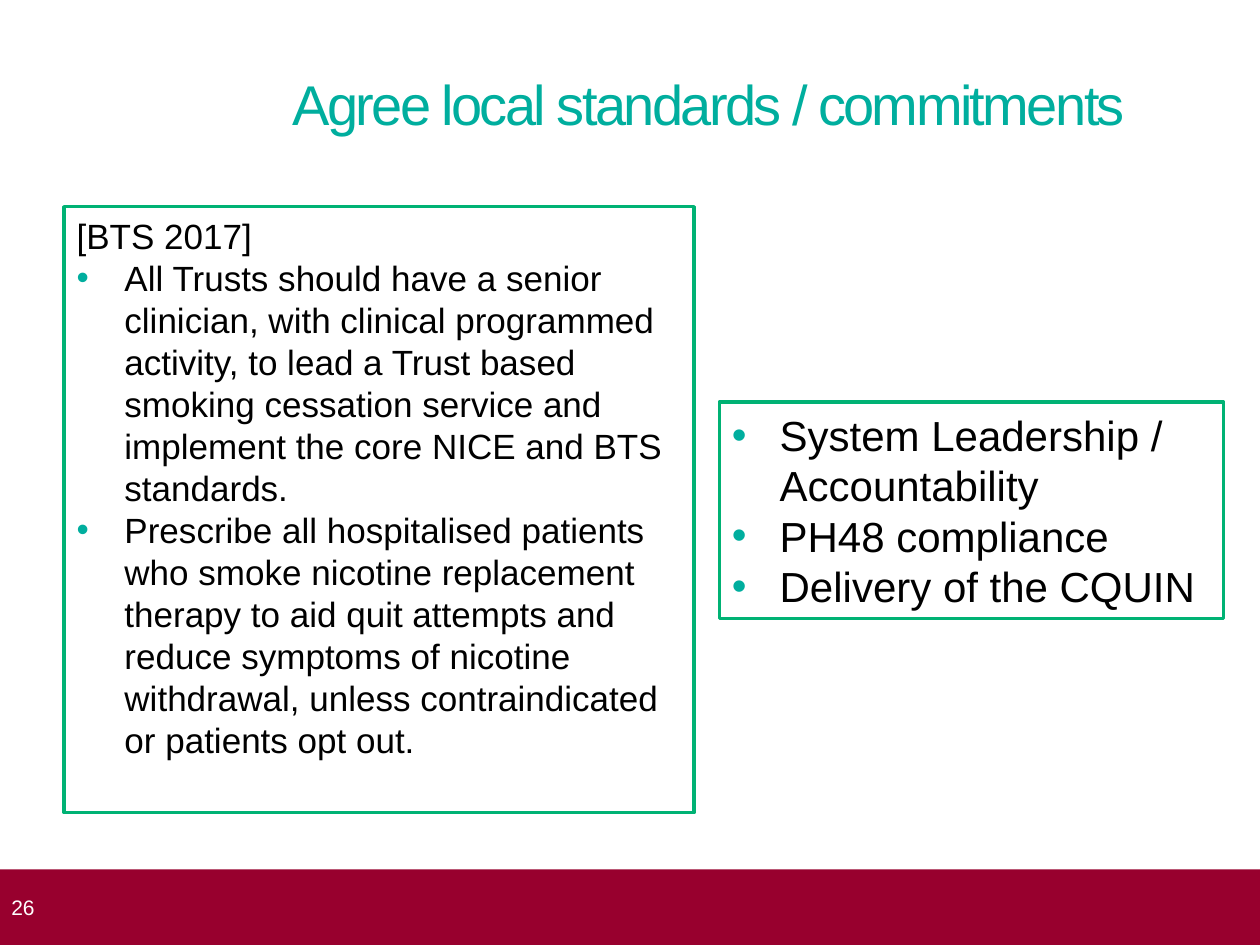
from lxml import etree
from pptx import Presentation
from pptx.dml.color import RGBColor
from pptx.enum.shapes import MSO_SHAPE
from pptx.enum.text import MSO_ANCHOR, PP_ALIGN
from pptx.oxml.ns import qn
from pptx.util import Inches, Pt

RECTANGLE = MSO_SHAPE.RECTANGLE
TOP, MIDDLE = MSO_ANCHOR.TOP, MSO_ANCHOR.MIDDLE
LEFT = PP_ALIGN.LEFT
FONT = "Arial"
TEAL, GREEN, MAROON = "00AE9E", "00B274", "98002E"
WHITE, BLACK = "FFFFFF", "000000"
LINE_HEIGHT = 1.2

STANDARDS = [
    "All Trusts should have a senior clinician, with clinical programmed activity, "
    "to lead a Trust based smoking cessation service and implement the core NICE "
    "and BTS standards.",
    "Prescribe all hospitalised patients who smoke nicotine replacement therapy to "
    "aid quit attempts and reduce symptoms of nicotine withdrawal, unless "
    "contraindicated or patients opt out.",
]
COMMITMENTS = [
    "System Leadership / Accountability",
    "PH48 compliance",
    "Delivery of the CQUIN",
]


def color(value):
    """Turn a hex string into a colour."""
    return RGBColor.from_string(value)


def set_frame(text_frame, anchor, left, top, right, bottom):
    """Set wrapping, anchor and insets of a text frame."""
    text_frame.word_wrap = True
    text_frame.vertical_anchor = anchor
    text_frame.margin_left = Inches(left)
    text_frame.margin_top = Inches(top)
    text_frame.margin_right = Inches(right)
    text_frame.margin_bottom = Inches(bottom)


def write(paragraph, text, size, text_color):
    """Fill a paragraph with one formatted run and return the run."""
    paragraph.text = text
    paragraph.alignment = LEFT
    paragraph.line_spacing = Pt(size * LINE_HEIGHT)
    run = paragraph.runs[0]
    run.font.name = FONT
    run.font.size = Pt(size)
    run.font.color.rgb = color(text_color)
    return run


def add_bullet(paragraph):
    """Give a paragraph a teal bullet with a hanging indent."""
    properties = paragraph._p.get_or_add_pPr()
    properties.set("marL", str(Inches(0.38)))
    properties.set("indent", str(Inches(-0.38)))
    bullet_color = etree.SubElement(properties, qn("a:buClr"))
    etree.SubElement(bullet_color, qn("a:srgbClr"), val=TEAL)
    etree.SubElement(properties, qn("a:buFont"), typeface=FONT)
    etree.SubElement(properties, qn("a:buChar"), char="•")


def add_rectangle(slide, box, fill):
    """Add a flat rectangle without an outline."""
    shape = slide.shapes.add_shape(RECTANGLE, *map(Inches, box))
    shape.shadow.inherit = False
    shape.fill.solid()
    shape.fill.fore_color.rgb = color(fill)
    shape.line.fill.background()
    return shape


def add_title(slide, box, text):
    """Add the tightly spaced slide title."""
    text_frame = slide.shapes.add_textbox(*map(Inches, box)).text_frame
    set_frame(text_frame, TOP, 0, 0.03, 0, 0)
    run = write(text_frame.paragraphs[0], text, 32, TEAL)
    run.font._element.set("spc", "-150")


def add_footer(slide, box, number):
    """Add the footer band with the slide number."""
    text_frame = add_rectangle(slide, box, MAROON).text_frame
    set_frame(text_frame, MIDDLE, 0.09, 0, 0.1, 0)
    write(text_frame.paragraphs[0], number, 12, WHITE)


def add_panel(slide, box, bullets, size, heading=None):
    """Add an outlined panel with an optional heading above its bullets."""
    panel = add_rectangle(slide, box, WHITE)
    panel.line.color.rgb = color(GREEN)
    panel.line.width = Pt(2)
    text_frame = panel.text_frame
    set_frame(text_frame, TOP, 0.1, 0.06, 0.1, 0.05)
    lines = [heading] + bullets if heading else bullets
    for index, text in enumerate(lines):
        paragraph = text_frame.add_paragraph() if index else text_frame.paragraphs[0]
        write(paragraph, text, size, BLACK)
        if text != heading:
            add_bullet(paragraph)


def main():
    """Build and save the slide."""
    presentation = Presentation()
    presentation.slide_width = Inches(10)
    presentation.slide_height = Inches(7.5)
    slide = presentation.slides.add_slide(presentation.slide_layouts[6])
    add_title(slide, (2.32, 0.52, 7.4, 0.71), "Agree local standards / commitments")
    add_footer(slide, (0, 6.9, 10, 0.6), "26")
    add_panel(slide, (0.51, 1.64, 5, 4.81), STANDARDS, 20, "[BTS 2017]")
    add_panel(slide, (5.71, 3.19, 4, 1.72), COMMITMENTS, 24)
    presentation.save("out.pptx")


if __name__ == "__main__":
    main()
